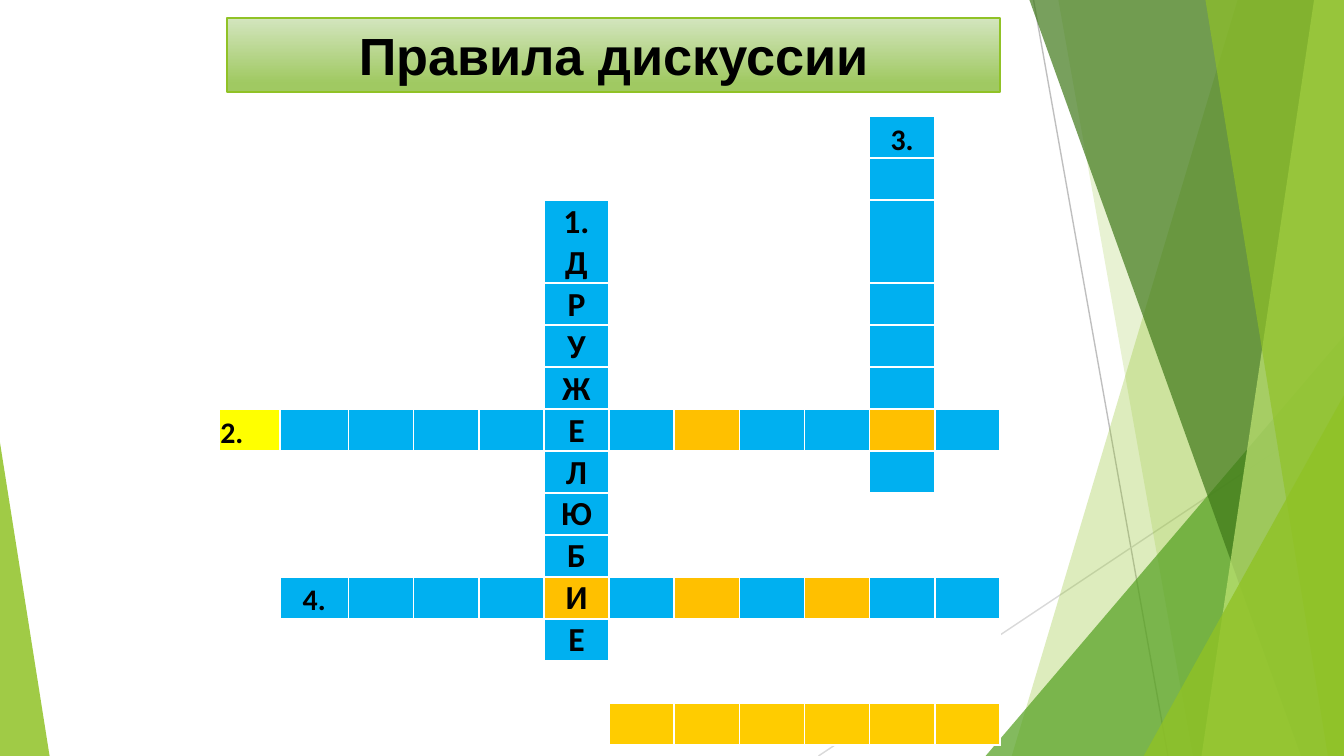
from lxml.etree import SubElement
from pptx import Presentation
from pptx.dml.color import RGBColor
from pptx.enum.shapes import MSO_CONNECTOR, MSO_SHAPE
from pptx.enum.text import MSO_ANCHOR, PP_ALIGN
from pptx.oxml.ns import qn
from pptx.util import Pt

COLOURS = {
    "white": "FFFFFF", "black": "000000", "blue": "00B0F0", "yellow": "FFFF00",
    "orange": "FFC000", "gold": "FFCC00", "lime": "90C226", "pale": "C0E474",
    "green": "54A021", "dark": "3F7819", "grey": "BFBFBF", "silver": "D9D9D9",
    "title top": "D3E5BE", "title bottom": "A0C962",
}

# One character per square
SQUARES = {".": "white", "b": "blue", "y": "yellow", "o": "orange", "g": "gold"}
CROSSWORD = [
    "..........b.",
    "..........b.",
    ".....b....b.",
    ".....b....b.",
    ".....b....b.",
    ".....b....b.",
    "ybbbbbbobbob",
    ".....b....b.",
    ".....b......",
    ".....b......",
    ".bbbbobobobb",
    ".....b......",
    "............",
    "......gggggg",
]
WORD, WORD_ROW, WORD_COLUMN = "ДРУЖЕЛЮБИЕ", 2, 5
CLUES = {(0, 10): "3.", (6, 0): "2.", (10, 1): "4."}


def colour(name):
    return RGBColor.from_string(COLOURS[name])


def set_values(target, values):
    for name, value in values.items():
        setattr(target, name, value)


def paint(shape, name, opacity):
    shape.shadow.inherit = False
    shape.line.fill.background()
    shape.fill.solid()
    shape.fill.fore_color.rgb = colour(name)
    tint = shape.fill._xPr.find(qn("a:solidFill"))[0]
    SubElement(tint, qn("a:alpha"), val=str(opacity * 1000))


def add_line(page, start, end, name):
    line = page.shapes.add_connector(
        MSO_CONNECTOR.STRAIGHT, *[Pt(value) for value in (*start, *end)])
    line.line.width = Pt(0.75)
    line.line.color.rgb = colour(name)
    SubElement(line._element.spPr, qn("a:effectLst"))


def add_triangle(page, box, apex, name, opacity):
    triangle = page.shapes.add_shape(
        MSO_SHAPE.ISOSCELES_TRIANGLE, *[Pt(value) for value in box])
    triangle.adjustments[0] = apex
    paint(triangle, name, opacity)


def add_facets(page, box):
    left, top, width, height = box
    right, bottom = left + width, top + height
    add_line(page, (left + 115.7, top), (left + 187.7, bottom), "grey")
    add_line(page, (right, top + 217.4), (left + 0.5, bottom), "silver")

    # Facets: x at the top and bottom; triangles: left and top offsets
    parts = [
        ("facet", 225, 104, "lime", 30),
        ("facet", 129, 201, "lime", 20),
        ("triangle", 90, 180, "green", 72),
        ("facet", 113.5, 259, "dark", 70),
        ("facet", 266, 205.7, "pale", 70),
        ("facet", 207.8, 273.4, "lime", 65),
        ("triangle", 174.7, 211.7, "lime", 80),
    ]
    for kind, first, second, name, opacity in parts:
        if kind == "triangle":
            area = (left + first, top + second, width - first, height - second)
            add_triangle(page, area, 1, name, opacity)
            continue
        outline = page.shapes.build_freeform(Pt(left + first), Pt(top))
        corners = [(right, top), (right, bottom), (left + second, bottom)]
        outline.add_line_segments([(Pt(x), Pt(y)) for x, y in corners])
        paint(outline.convert_to_shape(), name, opacity)


def add_title(page, box):
    title = page.shapes.title
    set_values(title, dict(zip(("left", "top", "width", "height"), map(Pt, box))))
    title.fill.gradient()
    title.fill.gradient_angle = 270
    stops = [("title top", 0), ("title bottom", 0.88)]
    for stop, (name, position) in zip(title.fill.gradient_stops, stops):
        stop.color.rgb = colour(name)
        stop.position = position
    title.line.color.rgb = colour("lime")
    title.line.width = Pt(1)
    frame = title.text_frame
    set_values(frame, {
        "text": "Правила дискуссии", "word_wrap": True,
        "vertical_anchor": MSO_ANCHOR.MIDDLE,
        "margin_left": Pt(3.6), "margin_right": Pt(3.6),
        "margin_top": Pt(1.8), "margin_bottom": Pt(1.8),
    })
    para = frame.paragraphs[0]
    para.alignment = PP_ALIGN.CENTER
    span = para.runs[0]
    set_values(span.font, {"name": "Arial", "size": Pt(28), "bold": True})
    span.font.color.rgb = colour("black")


def format_square(cell, name):
    set_values(cell, {
        "margin_left": Pt(0.6), "margin_right": Pt(0.6),
        "margin_top": Pt(0.5), "margin_bottom": 0,
        "vertical_anchor": MSO_ANCHOR.BOTTOM,
    })
    properties = cell._tc.get_or_add_tcPr()
    for side in ("lnL", "lnR", "lnT", "lnB"):
        border = SubElement(properties, qn(f"a:{side}"), w=str(Pt(1)))
        fill = SubElement(border, qn("a:solidFill"))
        SubElement(fill, qn("a:srgbClr"), val=COLOURS["white"])
    cell.fill.solid()
    cell.fill.fore_color.rgb = colour(name)


def write_square(cell, text, size, alignment=PP_ALIGN.CENTER):
    cell.text = text
    for para in cell.text_frame.paragraphs:
        para.alignment = alignment
        for span in para.runs:
            set_values(span.font, {"name": "Calibri", "size": Pt(size), "bold": True})
            span.font.color.rgb = colour("black")


def add_crossword(page, box):
    table = page.shapes.add_table(
        len(CROSSWORD), len(CROSSWORD[0]), *[Pt(value) for value in box]).table
    set_values(table, {"first_row": False, "horz_banding": False})
    for column, width in zip(table.columns, [32.6, 36.7] + [34.9] * 10):
        column.width = Pt(width)
    for index, row in enumerate(table.rows):
        row.height = Pt(44.5 if index == WORD_ROW else 22.4)
        for cell, mark in zip(row.cells, CROSSWORD[index]):
            format_square(cell, SQUARES[mark])

    # Solved word, numbered in its first square
    for index, letter in enumerate(WORD):
        text = letter if index else f"1.\n{letter}"
        write_square(table.cell(WORD_ROW + index, WORD_COLUMN), text, 18)

    # Numbers of the other words
    for (row, column), text in CLUES.items():
        alignment = PP_ALIGN.CENTER if column else PP_ALIGN.LEFT
        write_square(table.cell(row, column), text, 16, alignment)


def main():
    deck = Presentation()
    deck.slide_width, deck.slide_height = Pt(720), Pt(405)
    page = deck.slides.add_slide(deck.slide_layouts[5])
    add_facets(page, (438, 0, 282, 405))
    add_triangle(page, (0, 237, 26.6, 168), 0, "lime", 85)
    add_title(page, (121.7, 9.7, 414, 39.6))
    add_crossword(page, (117.4, 62.3, 418.3, 336))
    deck.save("out.pptx")


if __name__ == "__main__":
    main()
